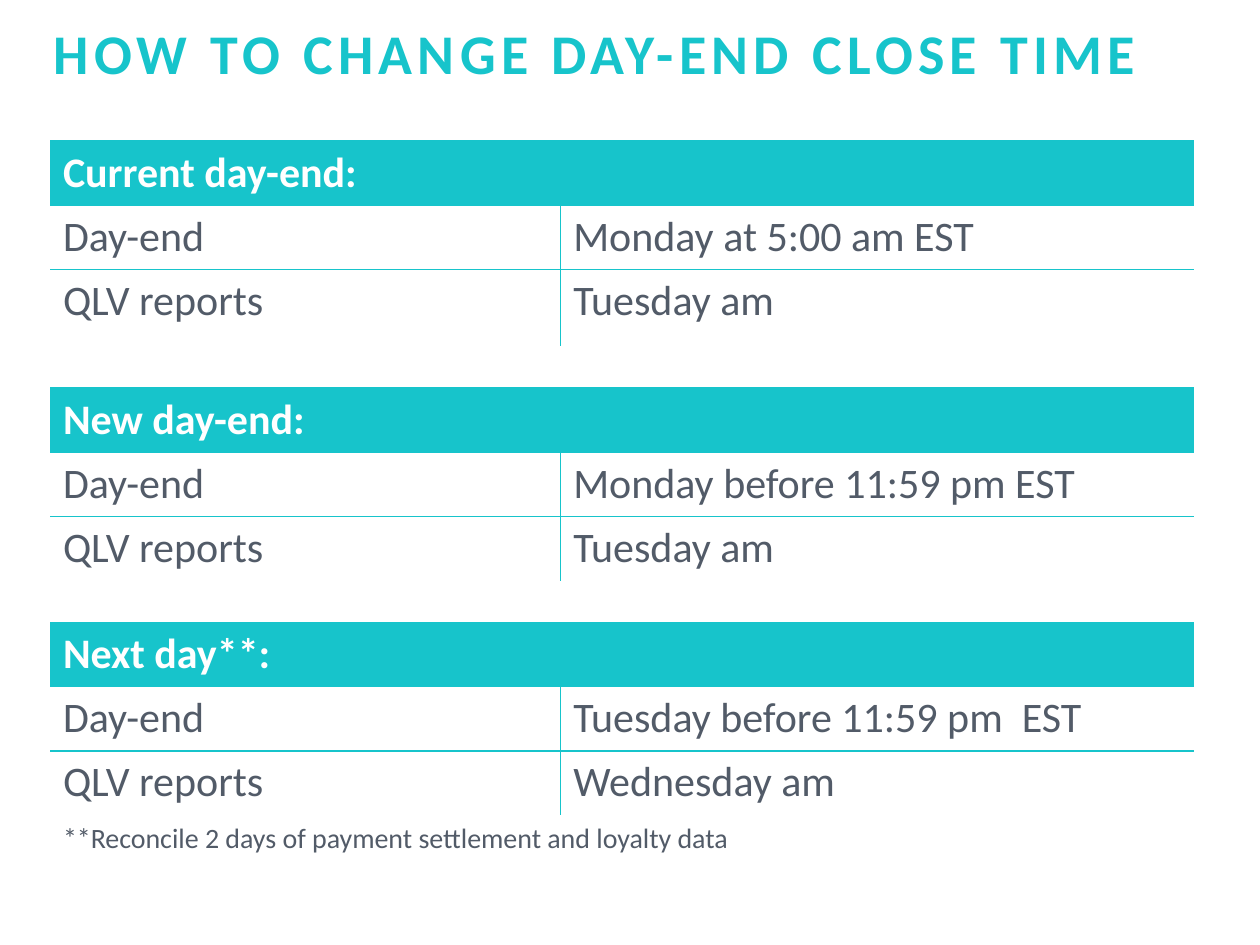
from dataclasses import dataclass
from lxml import etree
from pptx import Presentation
from pptx.dml.color import RGBColor
from pptx.oxml.ns import qn
from pptx.util import Inches, Pt


@dataclass(frozen=True)
class Theme:
    font: str = "Calibri"
    teal: str = "17C4CB"
    gray: str = "525B68"
    white: str = "FFFFFF"
    title: int = 32
    body: int = 24
    note: int = 16
    gap: int = 12


T = Theme()


def add_text(p, text, size, color, bold=False):
    r = p.add_run()
    r.text = text
    for name, value in {"name": T.font, "size": Pt(size), "bold": bold}.items():
        setattr(r.font, name, value)
    r.font.color.rgb = RGBColor.from_string(color)
    return r


def set_borders(cell, sides):
    tcPr = cell._tc.get_or_add_tcPr()
    for side in "LRTB":
        ln = etree.SubElement(tcPr, qn(f"a:ln{side}"), w=str(Pt(1)))
        if side in sides:
            fill = etree.SubElement(ln, qn("a:solidFill"))
            etree.SubElement(fill, qn("a:srgbClr"), val=T.teal)
        else:
            etree.SubElement(ln, qn("a:noFill"))


prs = Presentation()
prs.slide_width, prs.slide_height = Inches(10), Inches(7.5)
s = prs.slides.add_slide(prs.slide_layouts[6])

tf = s.shapes.add_textbox(Inches(0.33), Inches(0.2), Inches(9.63), Inches(0.64)).text_frame
tf.word_wrap = True
p = tf.paragraphs[0]
p.line_spacing = 0.8
r = add_text(p, "HOW TO CHANGE DAY-END CLOSE TIME", T.title, T.teal, True)
r.font._element.set("spc", "300")

sections = [
    ("Current day-end:", "Monday at 5:00 am EST", "Tuesday am"),
    ("New day-end:", "Monday before 11:59 pm EST", "Tuesday am"),
    ("Next day**:", "Tuesday before 11:59 pm  EST", "Wednesday am"),
]
rows = []
for heading, day_end, reports in sections:
    rows += [
        ("heading", [heading], 0.51),
        ("day_end", ["Day-end", day_end], 0.51),
        ("reports", ["QLV reports", reports], 0.51),
        ("gap", [""], 0.33),
    ]
rows[2] = (*rows[2][:2], 0.61)
rows[-1] = ("note", ["**Reconcile 2 days of payment settlement and loyalty data"], 0.41)

formats = {
    "heading": (T.body, T.white, True),
    "day_end": (T.body, T.gray, False),
    "reports": (T.body, T.gray, False),
    "note": (T.note, T.gray, False),
}
borders = {
    "heading": ("TB", "TB"),
    "day_end": ("TRB", "TLB"),
    "reports": ("TR", "TL"),
    "gap": ("B", "B"),
    "note": ("", ""),
}

frame = s.shapes.add_table(len(rows), 2, Inches(0.4), Inches(1.12), Inches(9.07), Inches(5.68))
table = frame.table
table.first_row = table.horz_banding = False
for column, width in zip(table.columns, (4.05, 5.03)):
    column.width = Inches(width)

for i, (kind, texts, height) in enumerate(rows):
    table.rows[i].height = Inches(height)
    cells = [table.cell(i, 0), table.cell(i, 1)]
    if len(texts) == 1:
        cells[0].merge(cells[1])
    for cell, sides in zip(cells, borders[kind]):
        set_borders(cell, sides)
        if kind == "heading":
            cell.fill.solid()
            cell.fill.fore_color.rgb = RGBColor.from_string(T.teal)
        else:
            cell.fill.background()
        if kind == "gap":
            p = cell.text_frame.paragraphs[0]
            etree.SubElement(p._p, qn("a:endParaRPr"), sz=str(T.gap * 100))
    if kind in formats:
        for cell, text in zip(cells, texts):
            add_text(cell.text_frame.paragraphs[0], text, *formats[kind])

prs.save("out.pptx")
